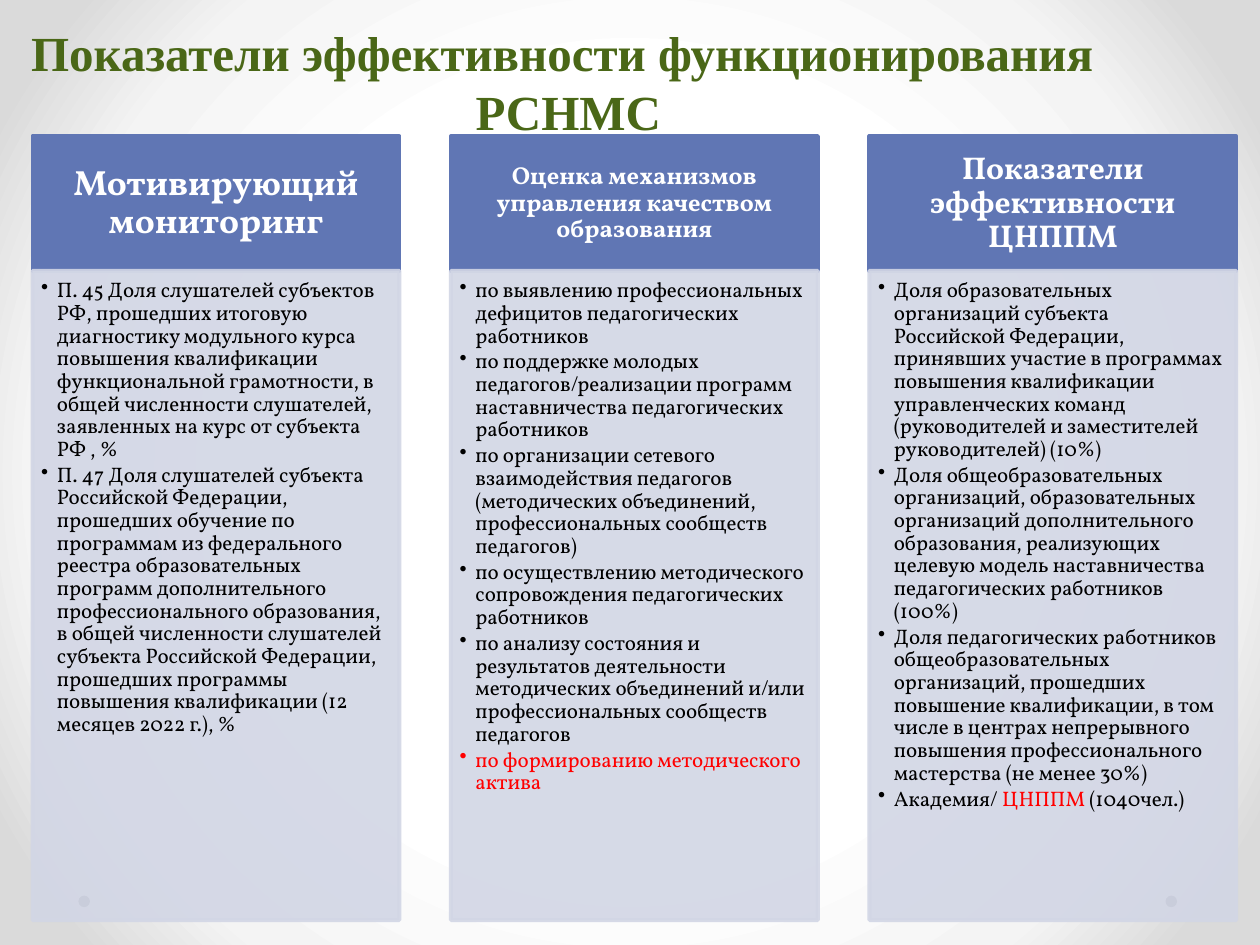
from lxml import etree
from pptx import Presentation
from pptx.dml.color import RGBColor
from pptx.enum.shapes import MSO_SHAPE
from pptx.enum.text import MSO_ANCHOR, PP_ALIGN
from pptx.oxml import parse_xml
from pptx.oxml.ns import nsdecls, qn
from pptx.util import Pt

RECTANGLE, OVAL = MSO_SHAPE.RECTANGLE, MSO_SHAPE.OVAL
TOP, MIDDLE = MSO_ANCHOR.TOP, MSO_ANCHOR.MIDDLE
LEFT, CENTER = PP_ALIGN.LEFT, PP_ALIGN.CENTER
BLUE, PALE, RED, BLACK, WHITE = "6076B4", "D2D6E5", "FF0000", "000000", "FFFFFF"
TITLE = ["Показатели эффективности функционирования ", "РСНМС"]
COLUMNS = [
    ("Мотивирующий мониторинг", 20, (11.5, 6.5), [
        [("П. 45 Доля слушателей субъектов РФ, прошедших итоговую диагностику модульного курса "
          "повышения квалификации функциональной грамотности, в общей численности слушателей, "
          "заявленных на курс от субъекта РФ , %", BLACK)],
        [("П. 47 Доля слушателей субъекта Российской Федерации, прошедших обучение по программам "
          "из федерального реестра образовательных программ дополнительного профессионального "
          "образования, в общей численности слушателей субъекта Российской Федерации, прошедших "
          "программы повышения квалификации (12 месяцев 2022 г.), %", BLACK)],
    ]),
    ("Оценка механизмов управления качеством образования", 14, (8, 4.5), [
        [("по выявлению профессиональных дефицитов педагогических работников", BLACK)],
        [("по поддержке молодых педагогов/реализации программ наставничества педагогических "
          "работников", BLACK)],
        [("по организации сетевого взаимодействия педагогов (методических объединений, "
          "профессиональных сообществ педагогов)", BLACK)],
        [("по осуществлению методического сопровождения педагогических работников", BLACK)],
        [("по анализу состояния и результатов деятельности методических объединений и/или "
          "профессиональных сообществ педагогов", BLACK)],
        [("по формированию методического актива", RED)],
    ]),
    ("Показатели эффективности ЦНППМ", 18, (10, 6), [
        [("Доля образовательных организаций субъекта Российской Федерации, принявших участие в "
          "программах повышения квалификации управленческих команд (руководителей и заместителей "
          "руководителей) (10%)", BLACK)],
        [("Доля общеобразовательных организаций, образовательных организаций дополнительного "
          "образования, реализующих целевую модель наставничества педагогических работников "
          "(100%)", BLACK)],
        [("Доля педагогических работников общеобразовательных организаций, прошедших повышение "
          "квалификации, в том числе в центрах непрерывного повышения профессионального "
          "мастерства (не менее 30%)", BLACK)],
        [("Академия/ ", BLACK), ("ЦНППМ", RED), (" (1040чел.)", BLACK)],
    ]),
]


def color(value):
    """Turn a hex string into a colour."""
    return RGBColor.from_string(value)


def style(span, size, value, font="Vollkorn", bold=False):
    """Format one run of text."""
    span.font.size, span.font.name, span.font.bold = Pt(size), font, bold
    span.font.color.rgb = color(value)


def set_background(page):
    """Fill the page with a radial gradient that darkens towards the corners."""
    stops = "".join(
        f'<a:gs pos="{position * 1000}"><a:srgbClr val="{value}"/></a:gs>'
        for position, value in [(50, WHITE), (76, "F4F4F4"), (92, "DADADA")])
    page.element.cSld.insert(0, parse_xml(
        f'<p:bg {nsdecls("p", "a")}><p:bgPr><a:gradFill rotWithShape="1">'
        f'<a:gsLst>{stops}</a:gsLst><a:path path="circle">'
        '<a:fillToRect l="50000" t="50000" r="50000" b="50000"/></a:path></a:gradFill>'
        '<a:effectLst/></p:bgPr></p:bg>'))


def add_panel(page, kind, left, top, width, height, value, line_width=0, opacity=100):
    """Add a plain shape whose fill and outline share one colour."""
    panel = page.shapes.add_shape(kind, Pt(left), Pt(top), Pt(width), Pt(height))
    panel.shadow.inherit = False
    panel.fill.solid()
    panel.fill.fore_color.rgb = color(value)
    if line_width:
        panel.line.width = Pt(line_width)
        panel.line.color.rgb = color(value)
    else:
        panel.line.fill.background()
    if opacity < 100:
        for paint in panel.element.spPr.iter(qn("a:srgbClr")):
            etree.SubElement(paint, qn("a:alpha")).set("val", str(opacity * 1000))
    return panel


def set_frame(frame, anchor, left, top, right, bottom):
    """Set wrapping, anchor and margins of a text frame."""
    frame.word_wrap, frame.vertical_anchor = True, anchor
    frame.margin_left, frame.margin_top = Pt(left), Pt(top)
    frame.margin_right, frame.margin_bottom = Pt(right), Pt(bottom)


def add_title(page, left, top, width, height):
    """Add the two centred title lines."""
    frame = page.shapes.add_textbox(Pt(left), Pt(top), Pt(width), Pt(height)).text_frame
    frame.word_wrap = False
    frame.text = "\n".join(TITLE)
    for para in frame.paragraphs:
        para.alignment = CENTER
        style(para.runs[0], 28, "4A6717", "Times New Roman", True)


def add_header(page, left, top, width, height, text, size, margins):
    """Add the blue heading of a column."""
    frame = add_panel(page, RECTANGLE, left, top, width, height, BLUE, 2.25).text_frame
    set_frame(frame, MIDDLE, *margins, *margins)
    frame.text = text
    para = frame.paragraphs[0]
    para.alignment, para.line_spacing = CENTER, 0.9
    style(para.runs[0], size, WHITE, bold=True)


def add_body(page, left, top, width, height, items):
    """Add the pale panel of a column with its bulleted items."""
    frame = add_panel(page, RECTANGLE, left, top, width, height, PALE, 2.25, 90).text_frame
    set_frame(frame, TOP, 5, 5, 6.5, 7)
    for index, item in enumerate(items):
        para = frame.add_paragraph() if index else frame.paragraphs[0]
        para.alignment, para.line_spacing, para.space_after = LEFT, 0.9, Pt(1.8)
        for text, value in item:
            span = para.add_run()
            span.text = text
            style(span, 12, value)
        properties = para._p.get_or_add_pPr()
        properties.set("marL", str(Pt(9)))
        properties.set("indent", str(Pt(-9)))
        etree.SubElement(properties, qn("a:buChar")).set("char", "•")


def add_column(page, left, top, width, height, heading, size, margins, items):
    """Add a heading with its list panel below."""
    header_height = 77
    add_header(page, left, top, width, header_height, heading, size, margins)
    add_body(page, left, top + header_height, width, height - header_height, items)


def main():
    """Build the slide and save it."""
    deck = Presentation()
    deck.slide_width, deck.slide_height = Pt(720), Pt(540)
    page = deck.slides.add_slide(deck.slide_layouts[6])
    set_background(page)
    for left in (666, 44.8):
        add_panel(page, OVAL, left, 511.8, 6.6, 6.6, "808080")
    add_title(page, 7.2, 9.4, 635, 75)
    for index, column in enumerate(COLUMNS):
        add_column(page, 18.6 + index * 239.1, 77.8, 209.7, 448, *column)
    deck.save("out.pptx")


if __name__ == "__main__":
    main()
